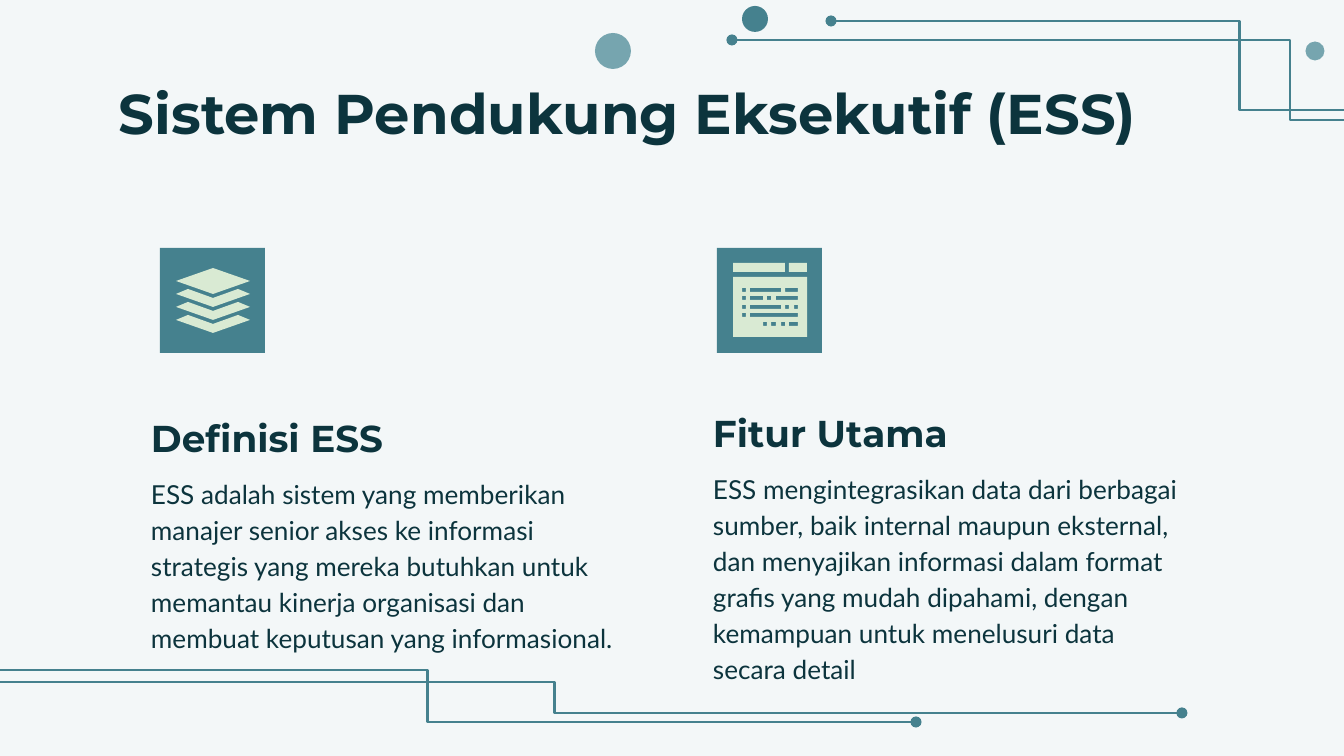
from lxml.etree import SubElement
from pptx import Presentation
from pptx.dml.color import RGBColor
from pptx.enum.shapes import MSO_CONNECTOR, MSO_SHAPE
from pptx.enum.text import MSO_ANCHOR
from pptx.oxml.ns import qn
from pptx.util import Emu, Pt

EMU_PER_PX = 914400 / 134.4
SLIDE_W, SLIDE_H = 1344, 756

BACKGROUND = "F3F7F8"
INK = "0C343D"
TEAL = "45818E"
LIGHT_TEAL = "76A5AF"
PALE_GREEN = "D9EAD3"

DOTS = [(613, 51, 36, LIGHT_TEAL), (755, 19, 26, TEAL), (1315, 51, 19, LIGHT_TEAL)]

# start, end, x of the bend, end that carries the dot
CIRCUITS = [
    ((732, 40), (SLIDE_W, 120), 1290, "headEnd"),
    ((831, 21), (SLIDE_W, 110), 1240, "headEnd"),
    ((0, 682), (1182, 713), 554, "tailEnd"),
    ((0, 670), (916, 722), 428, "tailEnd"),
]

# left, heading top, body width, heading, body
COLUMNS = [
    (138, 415, 501, "Definisi ESS",
     "ESS adalah sistem yang memberikan manajer senior akses ke informasi "
     "strategis yang mereka butuhkan untuk memantau kinerja organisasi dan "
     "membuat keputusan yang informasional."),
    (700, 410, 505, "Fitur Utama",
     "ESS mengintegrasikan data dari berbagai sumber, baik internal maupun "
     "eksternal, dan menyajikan informasi dalam format grafis yang mudah "
     "dipahami, dengan kemampuan untuk menelusuri data secara detail"),
]

# left and right of each dash in the browser window, row by row
CODE_ROWS = [
    [(742, 746), (750, 781), (785, 798)],
    [(742, 746), (750, 763), (767, 771), (776, 798)],
    [(742, 746), (750, 781), (785, 789), (794, 798)],
    [(742, 746), (750, 798)],
    [(763, 767), (771, 776), (781, 785), (789, 798)],
]


def px(length):
    return Emu(round(length * EMU_PER_PX))


def color(hex_string):
    return RGBColor.from_string(hex_string)


def paint(shape, fill):
    shape.shadow.inherit = False
    shape.fill.solid()
    shape.fill.fore_color.rgb = color(fill)
    shape.line.fill.background()


def add_preset(slide, kind, left, top, width, height, fill):
    shape = slide.shapes.add_shape(kind, px(left), px(top), px(width), px(height))
    paint(shape, fill)


def add_outline(slide, contours, fill):
    """Draw closed contours as one shape; inner contours become holes."""
    first, *others = contours
    builder = slide.shapes.build_freeform(*first[0], scale=EMU_PER_PX)
    builder.add_line_segments(first[1:], close=True)
    for contour in others:
        builder.move_to(*contour[0])
        builder.add_line_segments(contour[1:], close=True)
    paint(builder.convert_to_shape(), fill)


def add_circuit(slide, start, end, bend_x, dot_end):
    circuit = slide.shapes.add_connector(
        MSO_CONNECTOR.ELBOW, *map(px, start), *map(px, end))
    circuit.line.color.rgb = color(TEAL)
    circuit.line.width = Pt(1.5)
    properties = circuit._element.spPr
    bend = round((bend_x - start[0]) / (end[0] - start[0]) * 100000)
    adjustments = properties.find(qn("a:prstGeom")).get_or_add_avLst()
    SubElement(adjustments, qn("a:gd"), name="adj1", fmla=f"val {bend}")
    SubElement(properties.find(qn("a:ln")), qn(f"a:{dot_end}"), type="oval")
    SubElement(properties, qn("a:effectLst"))


def add_text(slide, box, text, font_name, size, bold=False,
             anchor=MSO_ANCHOR.TOP, line_spacing=1.0):
    frame = slide.shapes.add_textbox(*map(px, box)).text_frame
    frame.word_wrap = True
    frame.vertical_anchor = anchor
    frame.margin_left = frame.margin_right = px(13)
    frame.margin_top = frame.margin_bottom = px(13)
    paragraph = frame.paragraphs[0]
    paragraph.text = text
    paragraph.line_spacing = line_spacing
    paragraph.font.name = font_name
    paragraph.font.size = Pt(size)
    paragraph.font.bold = bold
    paragraph.font.color.rgb = color(INK)


def add_column(slide, left, top, width, heading, body):
    add_text(slide, (left, top, 320, 58), heading, "Montserrat", 20, bold=True,
             anchor=MSO_ANCHOR.BOTTOM, line_spacing=1.15)
    add_text(slide, (left, top + 46, width, 126), body, "Lato", 14,
             line_spacing=1.15)


def add_layers_icon(slide):
    add_preset(slide, MSO_SHAPE.RECTANGLE, 160, 248, 105, 105, TEAL)
    add_preset(slide, MSO_SHAPE.DIAMOND, 176, 268, 74, 26, PALE_GREEN)
    for top in range(289, 316, 13):
        layer = [(188, top), (176, top + 5), (213, top + 18),
                 (250, top + 5), (238, top), (213, top + 9)]
        add_outline(slide, [layer], PALE_GREEN)


def corners(left, top, right, bottom):
    return [(left, top), (left, bottom), (right, bottom), (right, top)]


def add_browser_icon(slide):
    add_preset(slide, MSO_SHAPE.RECTANGLE, 717, 248, 105, 105, TEAL)
    for left, width in [(733, 52), (789, 18)]:
        add_preset(slide, MSO_SHAPE.RECTANGLE, left, 263, width, 9, PALE_GREEN)
    contours = [corners(733, 277, 807, 337)]
    for row, dashes in enumerate(CODE_ROWS):
        top = 288 + row * 17 // 2
        contours += [corners(left, top, right, top + 4)[::-1]
                     for left, right in dashes]
    add_outline(slide, contours, PALE_GREEN)


def main():
    presentation = Presentation()
    presentation.slide_width = px(SLIDE_W)
    presentation.slide_height = px(SLIDE_H)
    slide = presentation.slides.add_slide(presentation.slide_layouts[6])
    slide.background.fill.solid()
    slide.background.fill.fore_color.rgb = color(BACKGROUND)

    for center_x, center_y, size, fill in DOTS:
        add_preset(slide, MSO_SHAPE.OVAL, center_x - size / 2,
                   center_y - size / 2, size, size, fill)
    for circuit in CIRCUITS:
        add_circuit(slide, *circuit)

    add_text(slide, (106, 66, 1133, 85), "Sistem Pendukung Eksekutif (ESS)",
             "Montserrat", 30, bold=True)
    for column in COLUMNS:
        add_column(slide, *column)
    add_layers_icon(slide)
    add_browser_icon(slide)

    presentation.save("out.pptx")


if __name__ == "__main__":
    main()
